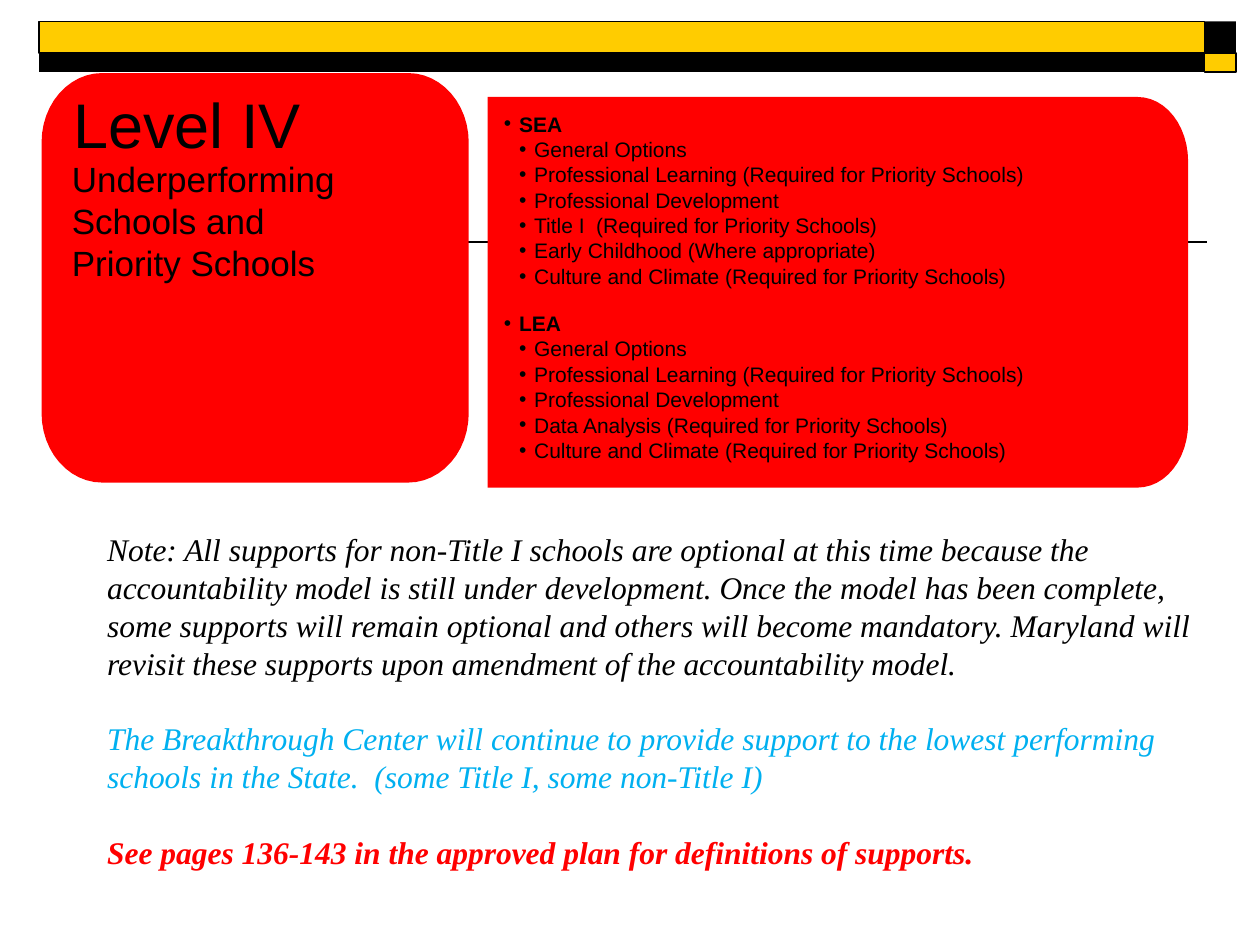
from math import cos, pi, sin

from lxml.etree import SubElement
from pptx import Presentation
from pptx.dml.color import RGBColor
from pptx.enum.shapes import MSO_CONNECTOR, MSO_SHAPE
from pptx.oxml.ns import qn
from pptx.util import Inches, Pt

COLORS = {"black": "000000", "gold": "FFCC00", "red": "FF0000", "blue": "00B0F0"}
WIDTH, HEIGHT = Inches(10), Inches(7.5)
COL, ROW = WIDTH / 100, HEIGHT / 75

REQUIRED = "(Required for Priority Schools)"
SHARED = ["General Options", f"Professional Learning {REQUIRED}", "Professional Development"]
CLIMATE = f"Culture and Climate {REQUIRED}"
SUPPORTS = {
    "SEA": [*SHARED, f"Title I  {REQUIRED}", "Early Childhood (Where appropriate)", CLIMATE],
    "LEA": [*SHARED, f"Data Analysis {REQUIRED}", CLIMATE],
}
NOTES = [
    ("Note: All supports for non-Title I schools are optional at this time because the "
     "accountability model is still under development. Once the model has been complete, "
     "some supports will remain optional and others will become mandatory. Maryland "
     "will revisit these supports upon amendment of the accountability model.", "black", False),
    ("The Breakthrough Center will continue to provide support to the lowest performing "
     "schools in the State.  (some Title I, some non-Title I)", "blue", False),
    ("See pages 136-143 in the approved plan for definitions of supports.", "red", True),
]


def rgb(name):
    return RGBColor.from_string(COLORS[name])


def place(box):
    x, y, w, h = box
    return [round(v) for v in (x * COL, y * ROW, w * COL, h * ROW)]


def paint(sp, fill, line=None):
    sp.shadow.inherit = False
    sp.fill.solid()
    sp.fill.fore_color.rgb = rgb(fill)
    if line:
        sp.line.color.rgb = rgb(line)
        sp.line.width = Pt(1)
    else:
        sp.line.fill.background()


def add_frame(s, box):
    tf = s.shapes.add_textbox(*place(box)).text_frame
    tf.word_wrap = True
    tf.margin_left = tf.margin_right = tf.margin_top = tf.margin_bottom = 0
    return tf


def add_text(tf, text, size, color="black", font="Arial", bold=False, italic=False,
             pitch=None, before=0):
    p = tf.paragraphs[0]
    if p.runs:
        p = tf.add_paragraph()
    p.space_before = Pt(before)
    if pitch:
        p.line_spacing = Pt(pitch)
    r = p.add_run()
    r.text = text
    r.font.name, r.font.size = font, Pt(size)
    r.font.bold, r.font.italic = bold, italic
    r.font.color.rgb = rgb(color)
    return p


def add_bullet(p, indent):
    pPr = p._p.get_or_add_pPr()
    pPr.set("marL", str(Inches(indent)))
    pPr.set("indent", str(Inches(-0.12)))
    SubElement(pPr, qn("a:buFont"), typeface="Arial")
    SubElement(pPr, qn("a:buChar"), char="•")


def add_panel(s, box, rx, ry, square_left=False, steps=12):
    x, y, w, h = box
    points = []
    for quarter, (right, bottom) in enumerate([(1, 1), (0, 1), (0, 0), (1, 0)]):
        if square_left and not right:
            points.append((x, y + h * bottom))
            continue
        cx = x + w - rx if right else x + rx
        cy = y + h - ry if bottom else y + ry
        for i in range(steps + 1):
            angle = (quarter + i / steps) * pi / 2
            points.append((cx + rx * cos(angle), cy + ry * sin(angle)))
    scaled = [(round(px * COL), round(py * ROW)) for px, py in points]
    builder = s.shapes.build_freeform(*scaled[0])
    builder.add_line_segments(scaled[1:], close=True)
    paint(builder.convert_to_shape(), "red")


def add_rule(s, box):
    x, y, w, h = place(box)
    line = s.shapes.add_connector(MSO_CONNECTOR.STRAIGHT, x, y, x + w, y + h)
    line.line.color.rgb = rgb("black")
    line.line.width = Pt(1)
    SubElement(line._element.spPr, qn("a:effectLst"))


def add_banner(s, box):
    x, y, w, h = box
    end, top = 2.5, 2.5
    cells = [
        ((x, y, w - end, top), "gold", "black"),
        ((x + w - end, y, end, top), "black", None),
        ((x, y + top, w - end, h - top), "black", None),
        ((x + w - end, y + top, end, h - top), "gold", "black"),
    ]
    for cell, fill, line in cells:
        paint(s.shapes.add_shape(MSO_SHAPE.RECTANGLE, *place(cell)), fill, line)


def add_level(s, box):
    x, y, w, h = box
    add_panel(s, box, 4.8, 5.5)
    add_text(add_frame(s, (x + 2.5, y + 1, w - 4, 6)), "Level IV", 36)
    tf = add_frame(s, (x + 2.4, y + 6.7, 24.4, 10))
    for text in ("Underperforming Schools and", "Priority Schools"):
        add_text(tf, text, 20, pitch=24)


def add_supports(s, box):
    x, y, w, h = box
    add_panel(s, box, 4, 5.1, square_left=True)
    tf = add_frame(s, (x + 1.1, y + 1.1, w - 6, h - 2))
    for i, (agency, options) in enumerate(SUPPORTS.items()):
        p = add_text(tf, agency, 12, bold=True, pitch=14.5, before=12.4 * i)
        add_bullet(p, 0.14)
        for option in options:
            add_bullet(add_text(tf, option, 12, pitch=14.5), 0.26)


def add_notes(s, box):
    tf = add_frame(s, box)
    for i, (text, color, bold) in enumerate(NOTES):
        add_text(tf, text, 18, color, "Times New Roman", bold, True,
                 pitch=21.6, before=21.6 if i else 0)


def main():
    prs = Presentation()
    prs.slide_width, prs.slide_height = WIDTH, HEIGHT
    s = prs.slides.add_slide(prs.slide_layouts[6])
    add_rule(s, (5, 19.2, 90.8, 0))
    add_banner(s, (3.1, 1.7, 95, 4))
    add_supports(s, (38.7, 7.7, 55.6, 31))
    add_level(s, (3.3, 5.8, 33.9, 32.5))
    add_notes(s, (8.5, 42.1, 86.3, 27.3))
    prs.save("out.pptx")


if __name__ == "__main__":
    main()
